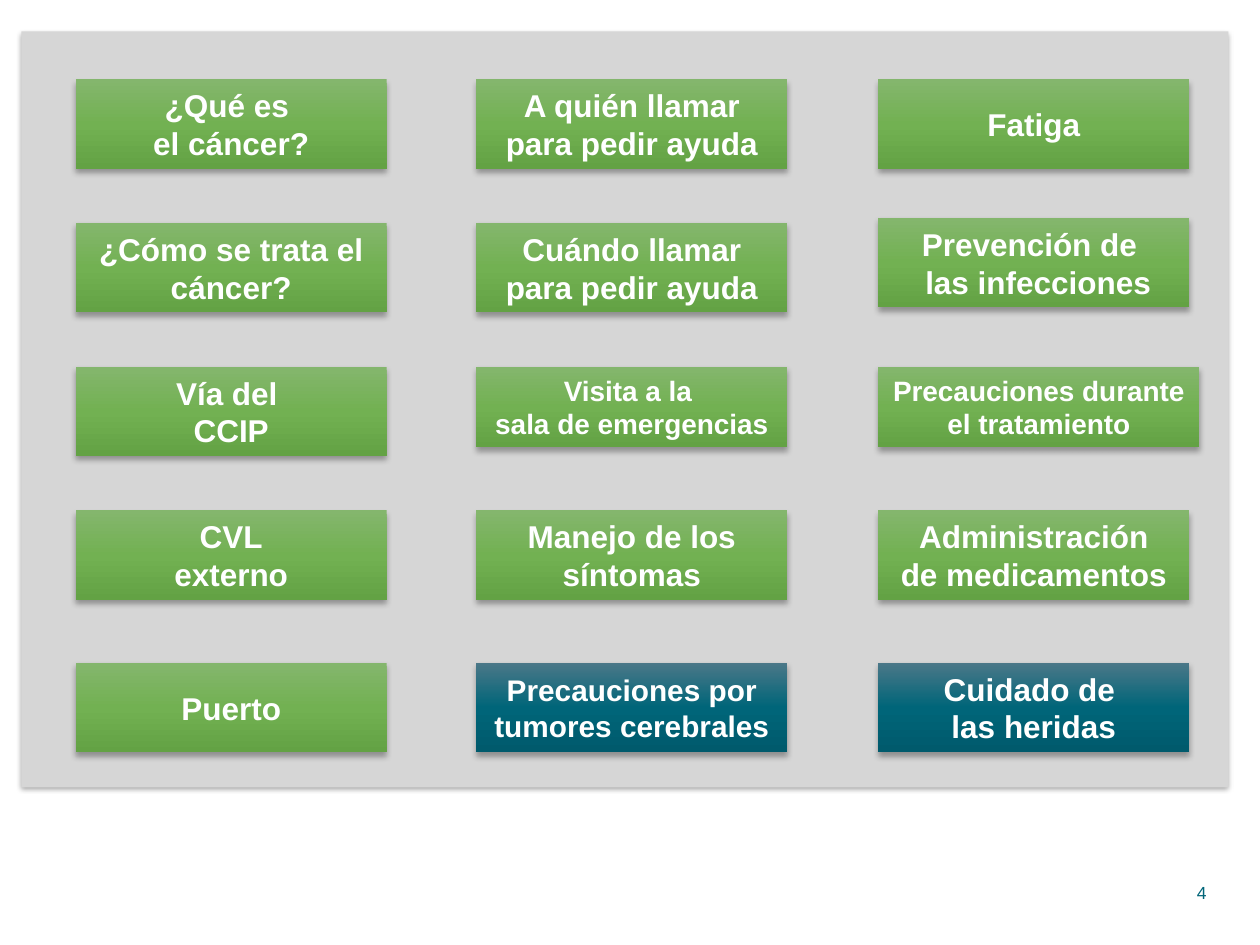
from copy import deepcopy
from dataclasses import dataclass

from lxml.etree import SubElement
from pptx import Presentation
from pptx.dml.color import RGBColor
from pptx.enum.shapes import MSO_SHAPE
from pptx.enum.text import MSO_ANCHOR, PP_ALIGN
from pptx.oxml.ns import qn
from pptx.util import Inches, Pt

WHITE = RGBColor(0xFF, 0xFF, 0xFF)
PANEL_GRAY = RGBColor(0xD6, 0xD6, 0xD6)
TEAL = RGBColor(0x00, 0x65, 0x79)
GREEN_GRADIENT = (RGBColor(0x84, 0xB6, 0x6D), RGBColor(0x72, 0xB1, 0x52),
                  RGBColor(0x63, 0xA2, 0x44))
TEAL_GRADIENT = (RGBColor(0x4B, 0x78, 0x88), TEAL, RGBColor(0x00, 0x5A, 0x6C))
FONT = "Arial"

# Grid of topic buttons, in inches
COLUMN_LEFTS = (0.6, 3.78, 6.97)
ROW_TOPS = (0.63, 1.77, 2.91, 4.05, 5.26)


@dataclass(frozen=True)
class Topic:
    lines: tuple[str, ...]
    size: float = 18
    width: float = 2.47
    height: float = 0.71
    raised: float = 0
    gradient: tuple[RGBColor, ...] = GREEN_GRADIENT


# One tuple per column, from top to bottom
TOPIC_COLUMNS = (
    (
        Topic(("¿Qué es ", "el cáncer?")),
        Topic(("¿Cómo se trata el cáncer?",)),
        Topic(("Vía del ", "CCIP")),
        Topic(("CVL", "externo")),
        Topic(("Puerto",)),
    ),
    (
        Topic(("A quién llamar", "para pedir ayuda")),
        Topic(("Cuándo llamar", "para pedir ayuda")),
        Topic(("Visita a la ", "sala de emergencias"), size=16, height=0.64),
        Topic(("Manejo de los", "síntomas")),
        Topic(("Precauciones por tumores cerebrales",), size=17,
              gradient=TEAL_GRADIENT),
    ),
    (
        Topic(("Fatiga",)),
        Topic(("Prevención de ", " las infecciones"), raised=0.04),
        Topic(("Precauciones durante el tratamiento",), size=16, width=2.55,
              height=0.64),
        Topic(("Administración", "de medicamentos")),
        Topic(("Cuidado de ", "las heridas"), gradient=TEAL_GRADIENT),
    ),
)


def add_rectangle(slide, left: float, top: float, width: float, height: float):
    shape = slide.shapes.add_shape(MSO_SHAPE.RECTANGLE, Inches(left), Inches(top),
                                   Inches(width), Inches(height))
    shape.line.fill.background()
    return shape


def set_shadow(shape, opacity: int, blur: float, distance: float) -> None:
    """Cast a black shadow straight down."""
    shape.shadow.inherit = False
    effects = shape._element.spPr.find(qn("a:effectLst"))
    shadow = SubElement(effects, qn("a:outerShdw"), blurRad=str(Pt(blur)),
                        dist=str(Pt(distance)), dir="5400000", rotWithShape="0")
    color = SubElement(shadow, qn("a:srgbClr"), val="000000")
    SubElement(color, qn("a:alpha"), val=str(opacity * 1000))


def set_gradient(shape, colors: tuple[RGBColor, ...]) -> None:
    """Blend evenly spaced colours from top to bottom."""
    shape.fill.gradient()
    shape.fill.gradient_angle = 270
    stop_list = shape._element.spPr.find(qn("a:gradFill")).find(qn("a:gsLst"))
    while len(stop_list) < len(colors):
        stop_list.append(deepcopy(stop_list[0]))
    for index, (stop, color) in enumerate(zip(shape.fill.gradient_stops, colors)):
        stop.position = index / (len(colors) - 1)
        stop.color.rgb = color


def add_text(paragraph, text: str, size: float, color: RGBColor,
             bold: bool = False) -> None:
    run = paragraph.add_run()
    run.text = text
    run.font.name = FONT
    run.font.size = Pt(size)
    run.font.bold = bold
    run.font.color.rgb = color


def add_topic(slide, topic: Topic, left: float, top: float) -> None:
    shape = add_rectangle(slide, left, top - topic.raised, topic.width, topic.height)
    set_gradient(shape, topic.gradient)
    set_shadow(shape, opacity=32, blur=3.5, distance=2.2)
    frame = shape.text_frame
    frame.word_wrap = True
    frame.vertical_anchor = MSO_ANCHOR.MIDDLE
    for index, line in enumerate(topic.lines):
        paragraph = frame.add_paragraph() if index else frame.paragraphs[0]
        paragraph.alignment = PP_ALIGN.CENTER
        add_text(paragraph, line, topic.size, WHITE, bold=True)


def add_page_number(slide, number: str) -> None:
    box = slide.shapes.add_textbox(Inches(9.5), Inches(7), Inches(0.17), Inches(0.17))
    frame = box.text_frame
    frame.word_wrap = False
    frame.margin_left = frame.margin_right = Inches(0)
    frame.margin_top = frame.margin_bottom = Inches(0)
    add_text(frame.paragraphs[0], number, 10, TEAL)


def main() -> None:
    presentation = Presentation()
    presentation.slide_width = Inches(10)
    presentation.slide_height = Inches(7.5)
    slide = presentation.slides.add_slide(presentation.slide_layouts[6])

    # Background panel
    panel = add_rectangle(slide, 0.17, 0.25, 9.58, 6)
    panel.fill.solid()
    panel.fill.fore_color.rgb = PANEL_GRAY
    set_shadow(panel, opacity=35, blur=3.1, distance=1.8)

    # Topic buttons
    for left, topics in zip(COLUMN_LEFTS, TOPIC_COLUMNS):
        for top, topic in zip(ROW_TOPS, topics):
            add_topic(slide, topic, left, top)

    add_page_number(slide, "4")
    presentation.save("out.pptx")


if __name__ == "__main__":
    main()
